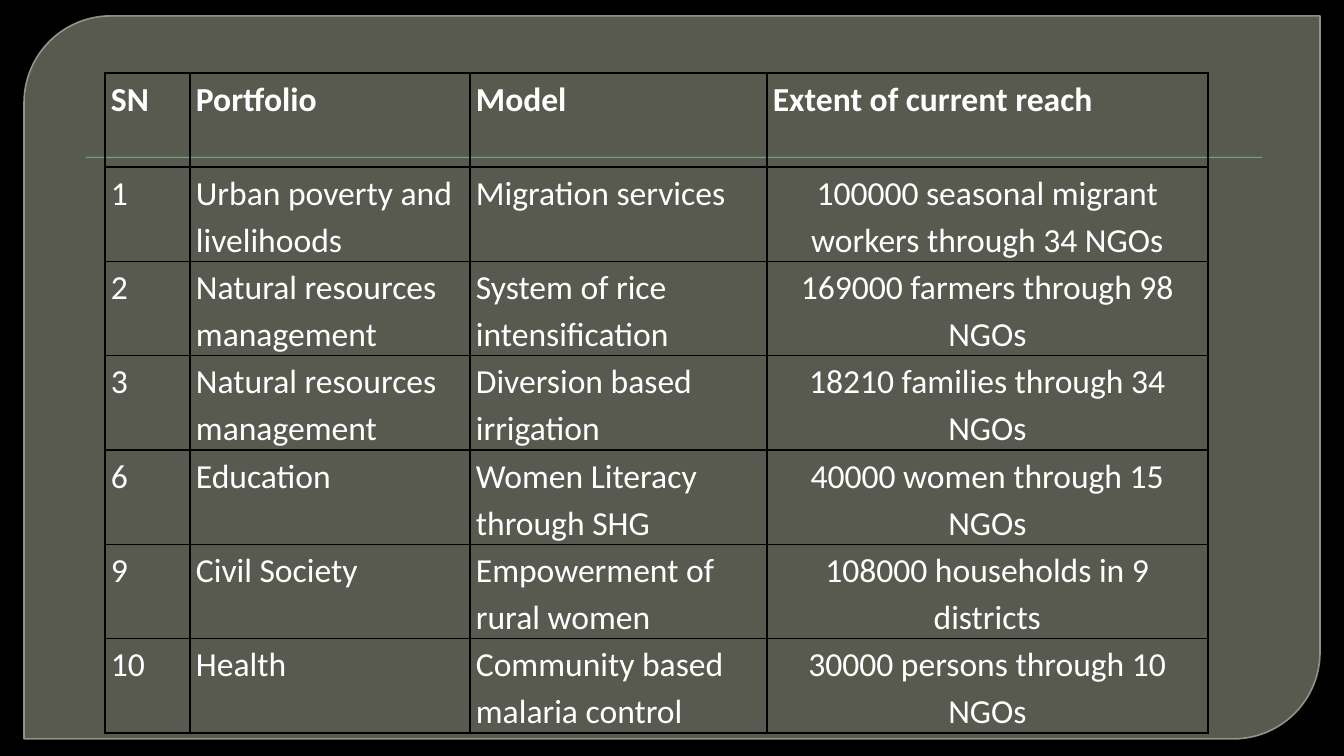
from dataclasses import dataclass
from pptx import Presentation
from pptx.dml.color import RGBColor as RGB
from pptx.enum.shapes import MSO_SHAPE as Kind
from pptx.enum.text import PP_ALIGN as Align
from pptx.oxml import parse_xml
from pptx.oxml.ns import nsdecls, qn
from pptx.util import Emu, Pt

SCALE = 914400 / 134.4


@dataclass(frozen=True)
class Theme:
    back: str = "000000"
    panel: str = "888B7B"
    edge: str = "9DA090"
    rule: str = "72A376"
    grid: str = "000000"
    text: str = "FFFFFF"
    font: str = "Calibri"
    size: int = 18
    lead: float = 1.15


@dataclass(frozen=True)
class Box:
    x: int
    y: int
    w: int
    h: int


@dataclass(frozen=True)
class Column:
    head: str
    width: int
    align: Align = Align.LEFT


@dataclass(frozen=True)
class Reach:
    sn: str
    folio: str
    model: str
    extent: str

    def cells(self) -> tuple[str, ...]:
        return self.sn, self.folio, self.model, self.extent


THEME = Theme()
PANEL = Box(24, 16, 1296, 723)
RULE = Box(86, 157, 1176, 1)
TABLE = Box(105, 73, 1103, 660)
INSET = 6

COLUMNS = [
    Column("SN", 85),
    Column("Portfolio", 280),
    Column("Model", 297),
    Column("Extent of current reach", 441, Align.CENTER),
]
ROWS = [
    Reach("1", "Urban poverty and livelihoods", "Migration services",
          "100000 seasonal migrant workers through 34 NGOs"),
    Reach("2", "Natural resources management", "System of rice intensification",
          "169000 farmers through 98 NGOs"),
    Reach("3", "Natural resources management", "Diversion based irrigation",
          "18210 families through 34 NGOs"),
    Reach("6", "Education", "Women Literacy through SHG",
          "40000 women through 15 NGOs"),
    Reach("9", "Civil Society", "Empowerment of rural women",
          "108000 households in 9 districts"),
    Reach("10", "Health", "Community based malaria control",
          "30000 persons through 10 NGOs"),
]


def px(n: int) -> Emu:
    return Emu(round(n * SCALE))


def place(box: Box) -> tuple[Emu, ...]:
    return px(box.x), px(box.y), px(box.w), px(box.h)


def fade(parent, percent: int) -> None:
    tint = parent.find(qn("a:solidFill")).find(qn("a:srgbClr"))
    tint.append(parse_xml(f'<a:alpha {nsdecls("a")} val="{percent * 1000}"/>'))


def draw_shape(slide, kind: Kind, box: Box, color: str):
    shape = slide.shapes.add_shape(kind, *place(box))
    shape.shadow.inherit = False
    shape.fill.solid()
    shape.fill.fore_color.rgb = RGB.from_string(color)
    shape.line.fill.background()
    return shape


def draw_panel(slide) -> None:
    panel = draw_shape(slide, Kind.ROUND_2_DIAG_RECTANGLE, PANEL, THEME.panel)
    panel.adjustments[0] = 0.12
    panel.adjustments[1] = 0
    panel.line.color.rgb = RGB.from_string(THEME.edge)
    panel.line.width = Pt(0.87)
    props = panel.element.spPr
    fade(props, 65)
    fade(props.find(qn("a:ln")), 88)


def draw_rule(slide) -> None:
    rule = draw_shape(slide, Kind.RECTANGLE, RULE, THEME.rule)
    effects = rule.element.spPr.find(qn("a:effectLst"))
    effects.append(parse_xml(
        f'<a:outerShdw {nsdecls("a")} blurRad="{Pt(1)}" dist="{Pt(1)}" dir="5400000">'
        f'<a:srgbClr val="{THEME.back}"><a:alpha val="75000"/></a:srgbClr></a:outerShdw>'))


def add_grid(cell) -> None:
    props = cell._tc.get_or_add_tcPr()
    for side in "LRTB":
        props.append(parse_xml(
            f'<a:ln{side} {nsdecls("a")} w="{Pt(1)}"><a:solidFill>'
            f'<a:srgbClr val="{THEME.grid}"/></a:solidFill></a:ln{side}>'))


def write_cell(cell, text: str, align: Align, bold: bool) -> None:
    add_grid(cell)
    cell.fill.background()
    cell.margin_left = cell.margin_right = px(INSET)
    cell.margin_top = cell.margin_bottom = 0
    para = cell.text_frame.paragraphs[0]
    para.alignment = align
    para.line_spacing = THEME.lead
    run = para.add_run()
    run.text = text
    run.font.name = THEME.font
    run.font.size = Pt(THEME.size)
    run.font.bold = bold
    run.font.color.rgb = RGB.from_string(THEME.text)


def draw_table(slide) -> None:
    count = len(ROWS) + 1
    table = slide.shapes.add_table(count, len(COLUMNS), *place(TABLE)).table
    table.first_row = table.horz_banding = False
    for row in table.rows:
        row.height = px(TABLE.h // count)
    for c, col in enumerate(COLUMNS):
        table.columns[c].width = px(col.width)
        write_cell(table.cell(0, c), col.head, Align.LEFT, True)
        for r, row in enumerate(ROWS, 1):
            write_cell(table.cell(r, c), row.cells()[c], col.align, False)


def main() -> None:
    deck = Presentation()
    deck.slide_width, deck.slide_height = px(1344), px(756)
    slide = deck.slides.add_slide(deck.slide_layouts[6])
    slide.background.fill.solid()
    slide.background.fill.fore_color.rgb = RGB.from_string(THEME.back)
    draw_panel(slide)
    draw_rule(slide)
    draw_table(slide)
    deck.save("out.pptx")


if __name__ == "__main__":
    main()
